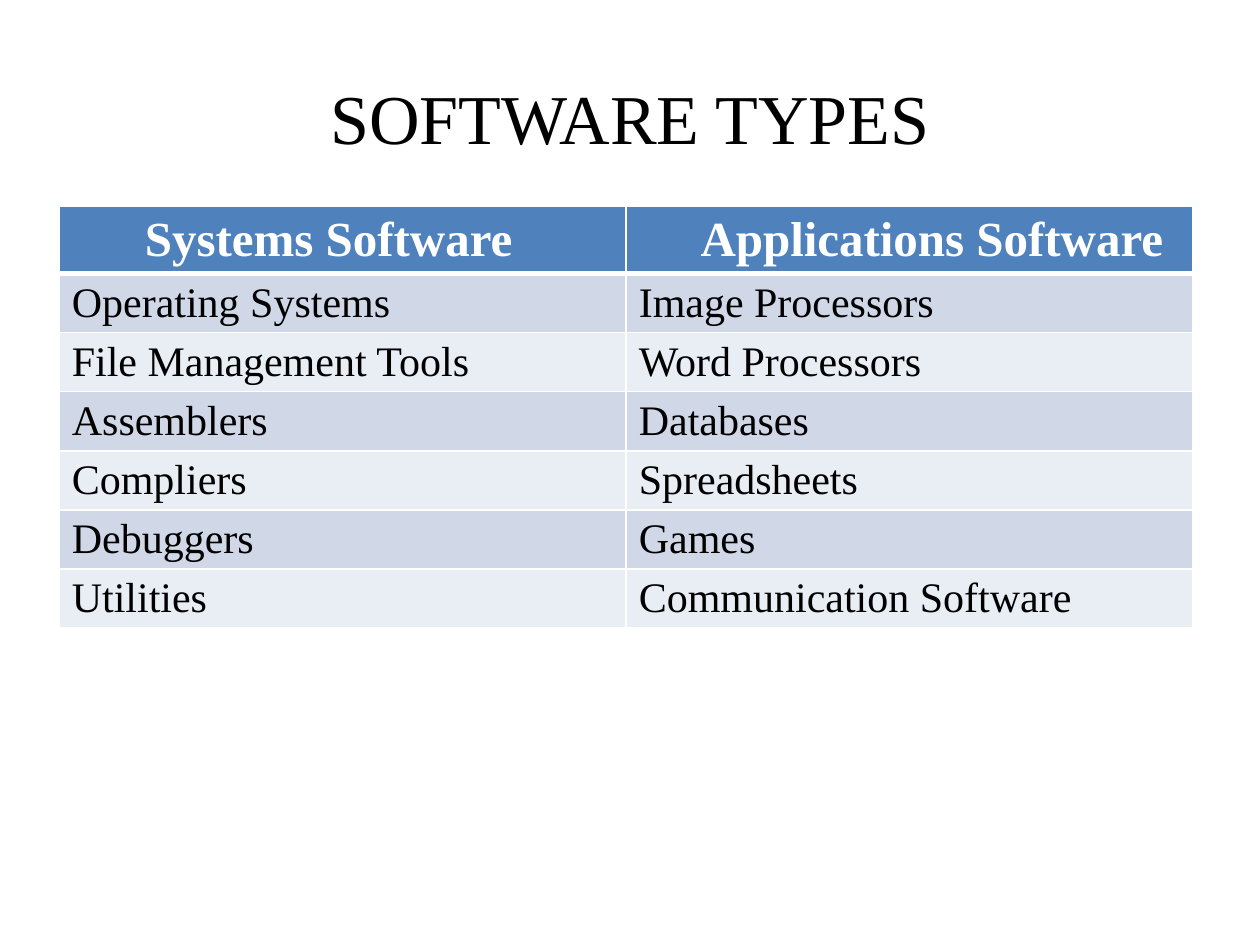
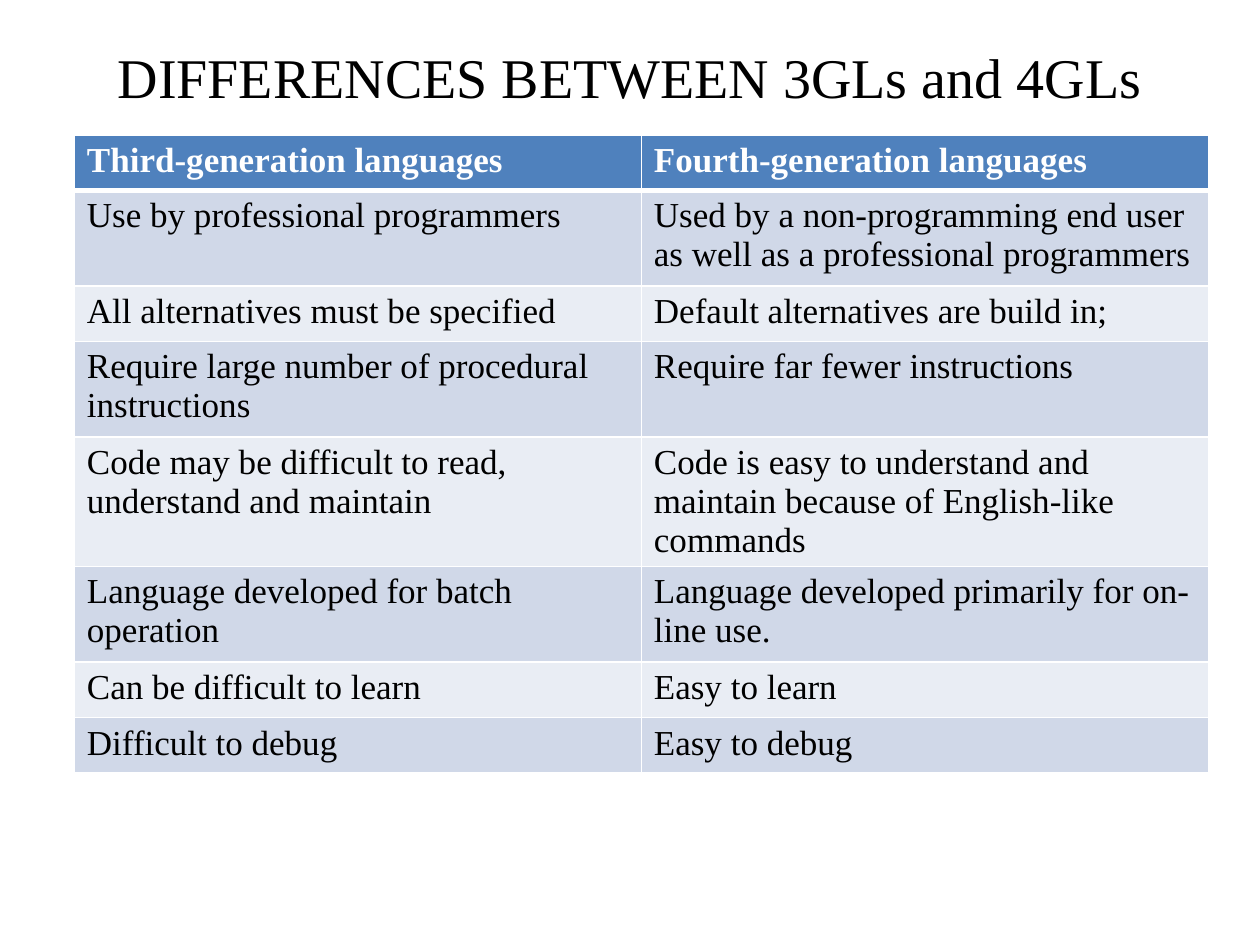
from lxml.etree import SubElement
from pptx import Presentation
from pptx.dml.color import RGBColor
from pptx.enum.text import MSO_ANCHOR, PP_ALIGN
from pptx.oxml.ns import qn
from pptx.util import Inches, Pt

FONT = "Times New Roman"
BLACK, WHITE, HEADER = "000000", "FFFFFF", "4F81BD"
BANDS = ["D0D8E8", "E9EDF4"]
COL_WIDTH, CELL_MARGIN = 4.5, 0.1

SLIDES = [
    {
        "title": "SOFTWARE TYPES",
        "title_size": 40,
        "title_height": 1.25,
        "table_at": (0.47, 1.64),
        "sizes": (28, 24),
        "header_indents": (0.58, 0.49),
        "row_heights": [0.41] * 7,
        "rows": [
            ("Systems Software", "Applications Software"),
            ("Operating Systems", "Image Processors"),
            ("File Management Tools", "Word Processors"),
            ("Assemblers", "Databases"),
            ("Compliers", "Spreadsheets"),
            ("Debuggers", "Games"),
            ("Utilities", "Communication Software"),
        ],
    },
    {
        "title": "DIFFERENCES BETWEEN 3GLs and 4GLs",
        "title_size": 32,
        "title_height": 0.61,
        "table_at": (0.59, 1.07),
        "sizes": (20, 20),
        "header_indents": (0, 0),
        "row_heights": [0.44, 0.76, 0.44, 0.76, 0.76, 0.76, 0.44, 0.44],
        "rows": [
            ("Third-generation languages", "Fourth-generation languages"),
            ("Use by professional programmers",
             "Used by a non-programming end user as well as a professional programmers"),
            ("All alternatives must be specified", "Default alternatives are build in;"),
            ("Require large number of procedural instructions",
             "Require far fewer instructions"),
            ("Code may be difficult to read, understand and maintain",
             "Code is easy to understand and maintain because of English-like commands"),
            ("Language developed for batch operation",
             "Language developed primarily for on-line use."),
            ("Can be difficult to learn", "Easy to learn"),
            ("Difficult to debug", "Easy to debug"),
        ],
    },
]


def rgb(color):
    return RGBColor.from_string(color)


def set_font(p, size, color, bold=False):
    p.font.name = FONT
    p.font.size = Pt(size)
    p.font.bold = bold
    p.font.color.rgb = rgb(color)


def set_borders(cell, top, bottom):
    tcPr = cell._tc.get_or_add_tcPr()
    for side, width in (("L", 1), ("R", 1), ("T", top), ("B", bottom)):
        ln = SubElement(tcPr, qn(f"a:ln{side}"), w=str(Pt(width)))
        fill = SubElement(ln, qn("a:solidFill"))
        SubElement(fill, qn("a:srgbClr"), val=WHITE)


def add_title(s, data):
    title = s.shapes.title
    title.left, title.top = Inches(0.5), Inches(0.3)
    title.width, title.height = Inches(9), Inches(data["title_height"])
    tf = title.text_frame
    tf.text = data["title"]
    tf.vertical_anchor = MSO_ANCHOR.MIDDLE
    p = tf.paragraphs[0]
    p.alignment = PP_ALIGN.CENTER
    set_font(p, data["title_size"], BLACK)


def fill_cell(cell, text, row, size, indent):
    is_header = row == 0
    set_borders(cell, 3 if row == 1 else 1, 3 if is_header else 1)
    cell.fill.solid()
    cell.fill.fore_color.rgb = rgb(HEADER if is_header else BANDS[(row - 1) % 2])
    cell.margin_left = Inches(CELL_MARGIN + indent)
    cell.text = text
    set_font(cell.text_frame.paragraphs[0], size, WHITE if is_header else BLACK, is_header)


def add_comparison(s, data):
    rows, heights = data["rows"], data["row_heights"]
    left, top = data["table_at"]
    table = s.shapes.add_table(len(rows), 2, Inches(left), Inches(top),
                               Inches(2 * COL_WIDTH), Inches(sum(heights))).table
    for row, (texts, height) in enumerate(zip(rows, heights)):
        table.rows[row].height = Inches(height)
        size = data["sizes"][min(row, 1)]
        for col, text in enumerate(texts):
            indent = data["header_indents"][col] if row == 0 else 0
            fill_cell(table.cell(row, col), text, row, size, indent)


def main():
    prs = Presentation()
    prs.slide_width, prs.slide_height = Inches(10), Inches(7.5)
    for data in SLIDES:
        s = prs.slides.add_slide(prs.slide_layouts[5])
        add_title(s, data)
        add_comparison(s, data)
    prs.save("out.pptx")


if __name__ == "__main__":
    main()
